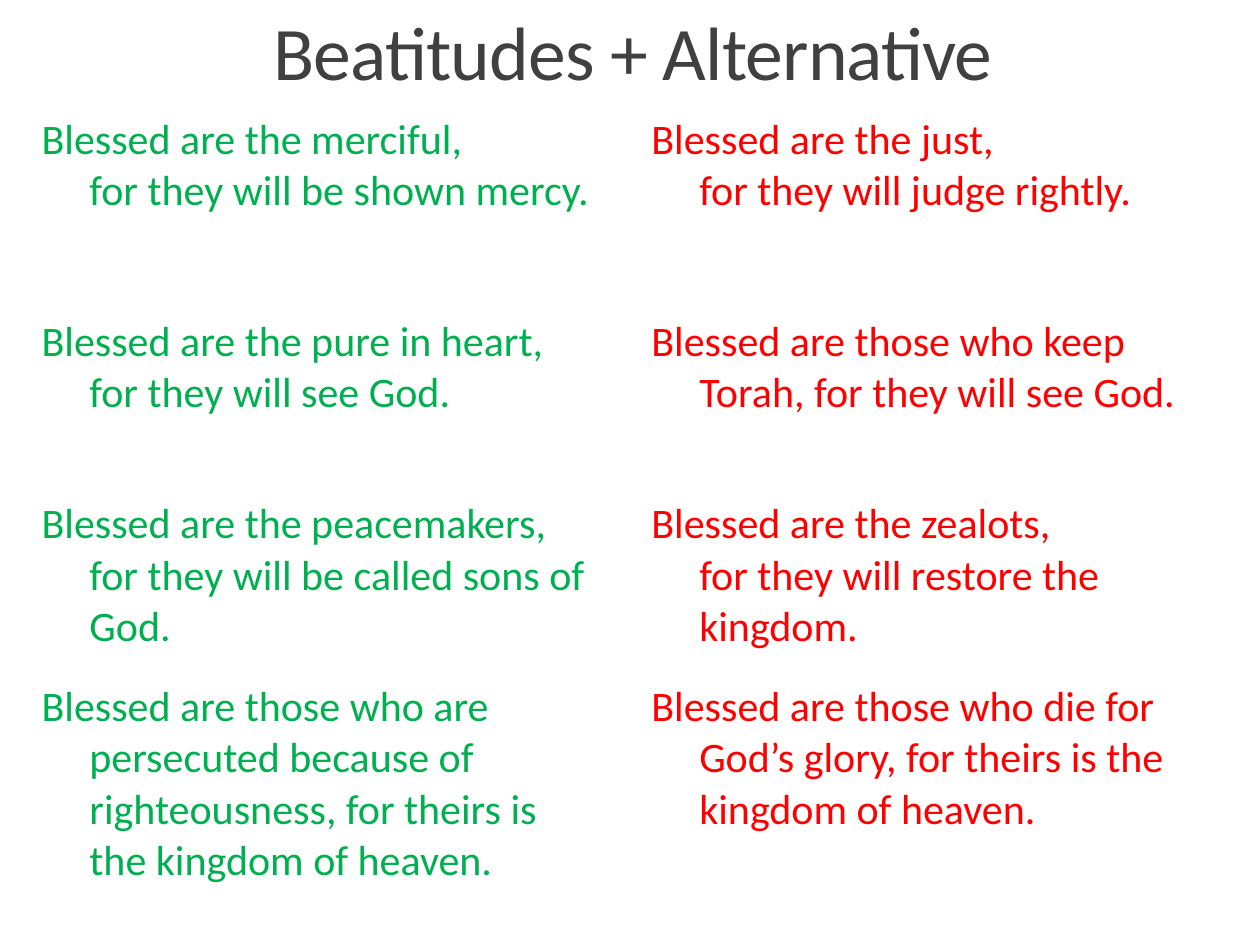
"""Build the slide that sets four beatitudes beside their alternatives."""
from dataclasses import dataclass

import pptx
import pptx.dml.color
import pptx.enum.text
import pptx.util
from pptx.util import Inches


@dataclass(frozen=True)
class Theme:
    """Colours and type of the slide."""
    font: str = "Calibri"
    title_size: float = 43.2
    verse_size: float = 24
    title_color: str = "404040"
    beatitude_color: str = "00B050"
    alternative_color: str = "FF0000"


THEME = Theme()
HANGING_INDENT = Inches(0.38)
COLUMN_WIDTH = 4.84
ROW_HEIGHTS = (1.6, 1.45, 1.45, 2.06)

VERSES = (
    (("Blessed are the merciful,", "for they will be shown mercy."),
     ("Blessed are the just,", "for they will judge rightly.")),
    (("Blessed are the pure in heart,", "for they will see God."),
     ("Blessed are those who keep", "Torah, for they will see God.")),
    (("Blessed are the peacemakers,", "for they will be called sons of", "God."),
     ("Blessed are the zealots,", "for they will restore the", "kingdom.")),
    (("Blessed are those who are", "persecuted because of",
      "righteousness, for theirs is", "the kingdom of heaven."),
     ("Blessed are those who die for", "God’s glory, for theirs is the",
      "kingdom of heaven.")),
)


def add_run(paragraph, text, size, color):
    """Add one styled run to a paragraph and return it."""
    run = paragraph.add_run()
    run.text = text
    run.font.name = THEME.font
    run.font.size = pptx.util.Pt(size)
    run.font.color.rgb = pptx.dml.color.RGBColor.from_string(color)
    return run


def add_title(slide, text):
    """Add the centred, slightly tightened heading."""
    heading = slide.shapes.add_textbox(
        Inches(0.9), Inches(0.14), Inches(8.25), Inches(0.67)).text_frame
    heading.word_wrap = True
    heading.vertical_anchor = pptx.enum.text.MSO_ANCHOR.BOTTOM
    paragraph = heading.paragraphs[0]
    paragraph.alignment = pptx.enum.text.PP_ALIGN.CENTER
    paragraph.line_spacing = 0.85
    run = add_run(paragraph, text, THEME.title_size, THEME.title_color)
    run.font._element.set("spc", "-50")


def fill_verse(cell, lines, color):
    """Write a verse with its later lines indented under the first."""
    cell.fill.background()
    paragraph = cell.text_frame.paragraphs[0]
    properties = paragraph._p.get_or_add_pPr()
    properties.set("marL", str(HANGING_INDENT))
    properties.set("indent", str(-HANGING_INDENT))
    for number, line in enumerate(lines):
        if number:
            paragraph.add_line_break()
        add_run(paragraph, line, THEME.verse_size, color)


def add_verses(slide, verses):
    """Add the two-column comparison of verses."""
    colors = (THEME.beatitude_color, THEME.alternative_color)
    comparison = slide.shapes.add_table(
        len(verses), len(colors), Inches(0.23), Inches(0.86),
        Inches(COLUMN_WIDTH * len(colors)), Inches(sum(ROW_HEIGHTS))).table
    comparison.first_row = False
    comparison.horz_banding = False
    for column in comparison.columns:
        column.width = Inches(COLUMN_WIDTH)
    for row, height, pair in zip(comparison.rows, ROW_HEIGHTS, verses):
        row.height = Inches(height)
        for cell, lines, color in zip(row.cells, pair, colors):
            fill_verse(cell, lines, color)


def main():
    """Build and save the presentation."""
    presentation = pptx.Presentation()
    presentation.slide_width = Inches(10)
    presentation.slide_height = Inches(7.5)
    slide = presentation.slides.add_slide(presentation.slide_layouts[6])
    add_title(slide, "Beatitudes + Alternative")
    add_verses(slide, VERSES)
    presentation.save("out.pptx")


if __name__ == "__main__":
    main()
